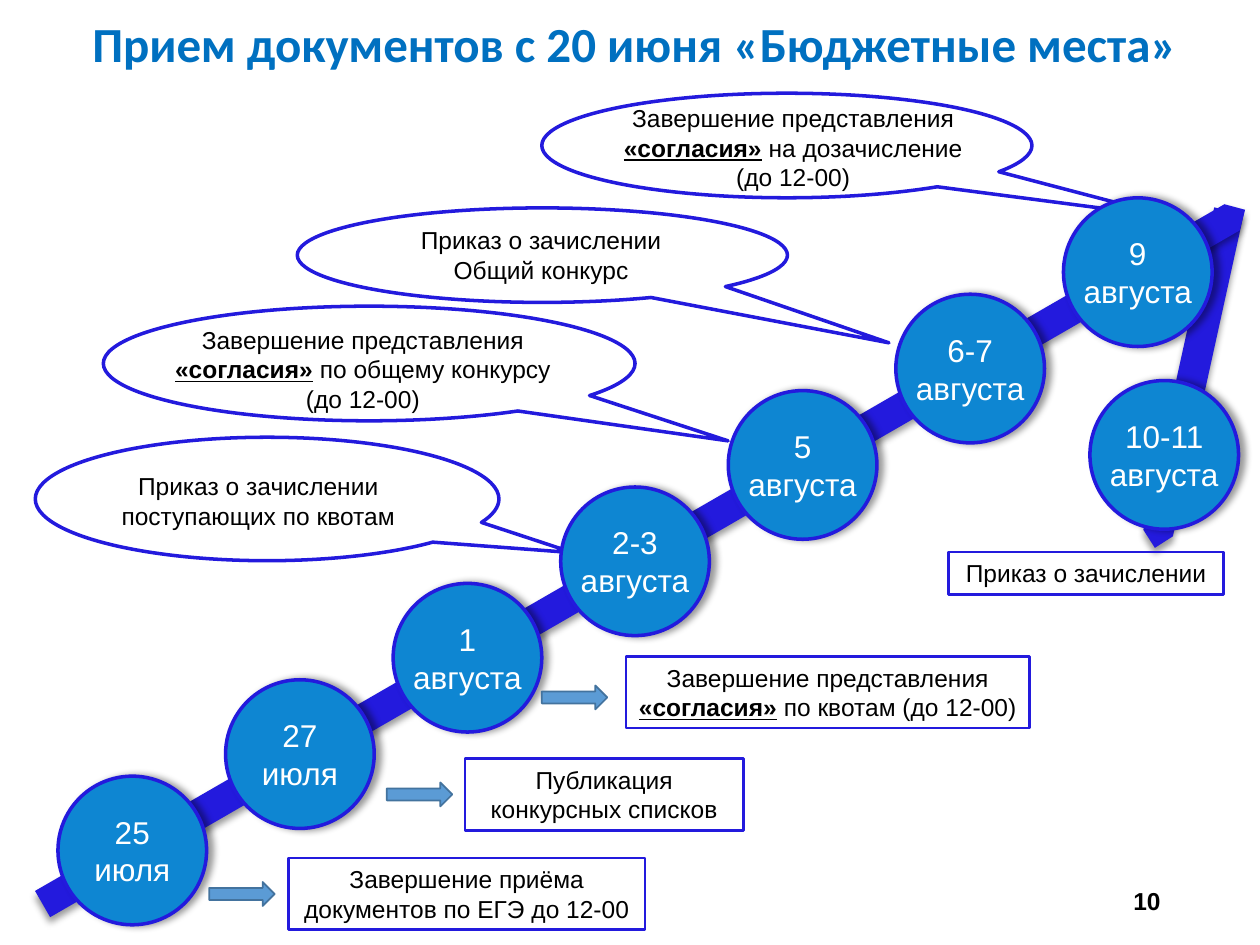
from lxml import etree
from pptx import Presentation
from pptx.dml.color import RGBColor
from pptx.enum.shapes import MSO_SHAPE
from pptx.enum.text import MSO_ANCHOR, PP_ALIGN
from pptx.oxml.ns import qn
from pptx.util import Inches, Pt

CALLOUT = MSO_SHAPE.OVAL_CALLOUT
RECT, OVAL = MSO_SHAPE.RECTANGLE, MSO_SHAPE.OVAL
PENTAGON, ARROW = MSO_SHAPE.PENTAGON, MSO_SHAPE.RIGHT_ARROW
TOP, MIDDLE = MSO_ANCHOR.TOP, MSO_ANCHOR.MIDDLE
CENTER, RIGHT = PP_ALIGN.CENTER, PP_ALIGN.RIGHT

INDIGO = RGBColor(0x23, 0x1A, 0xDD)
BLUE = RGBColor(0x0E, 0x86, 0xD2)
TITLE_BLUE = RGBColor(0x00, 0x70, 0xC0)
ARROW_FILL = RGBColor(0x5B, 0x9B, 0xD5)
ARROW_LINE = RGBColor(0x43, 0x73, 0x9E)
BLACK = RGBColor(0, 0, 0)
WHITE = RGBColor(255, 255, 255)

DIAMETER = 1.18
STEP_X, STEP_Y = 1.33, -0.765
DATES = ["25\nиюля", "27\nиюля", "1\nавгуста", "2-3\nавгуста",
         "5\nавгуста", "6-7\nавгуста", "9\nавгуста"]

# callout box, pointer offset, text box, text (emphasis between asterisks)
CALLOUTS = [
    ((4.3, 0.74, 3.89, 0.83), (0.787, 0.688), (4.42, 0.77, 3.75, 0.81),
     "Завершение представления *«согласия»* на дозачисление\n(до 12-00)"),
    ((2.36, 1.65, 3.89, 0.75), (0.707, 0.928), (2.88, 1.74, 2.83, 0.57),
     "Приказ о зачислении\nОбщий конкурс"),
    ((0.82, 2.43, 4.22, 0.91), (0.675, 0.675), (1.02, 2.53, 3.72, 0.81),
     "Завершение представления *«согласия»* по общему конкурсу\n(до 12-00)"),
    ((0.28, 3.47, 3.68, 0.98), (0.66, 0.435), (0.43, 3.69, 3.24, 0.57),
     "Приказ о зачислении поступающих по квотам"),
]
NOTES = [
    ((2.29, 6.81, 2.83, 0.57), "Завершение приёма документов по ЕГЭ до 12-00"),
    ((3.69, 6.02, 2.21, 0.57), "Публикация конкурсных списков"),
    ((4.97, 5.21, 3.2, 0.57),
     "Завершение представления *«согласия»* по квотам (до 12-00)"),
    ((7.53, 4.38, 2.18, 0.34), "Приказ о зачислении"),
]
ARROWS = [(1.66, 7), (3.07, 6.21), (4.3, 5.44)]


def write(s, text, size=14, color=BLACK, font="Arial", bold=False,
          align=CENTER, anchor=TOP, wrap=True):
    """Fill a shape with text; parts between asterisks are bold and underlined."""
    tf = s.text_frame
    tf.word_wrap = wrap
    tf.vertical_anchor = anchor
    for i, line in enumerate(text.split("\n")):
        p = tf.add_paragraph() if i else tf.paragraphs[0]
        p.alignment = align
        for j, part in enumerate(line.split("*")):
            r = p.add_run()
            r.text = part
            emphasis = j % 2 == 1
            r.font.name, r.font.size = font, Pt(size)
            r.font.bold, r.font.underline = bold or emphasis, emphasis
            r.font.color.rgb = color


def add_text(slide, box, text, **style):
    write(slide.shapes.add_textbox(*map(Inches, box)), text, **style)


def add_figure(slide, kind, box, fill=None, line=None, width=2):
    s = slide.shapes.add_shape(kind, *map(Inches, box))
    s.shadow.inherit = False
    if fill is None:
        s.fill.background()
    else:
        s.fill.solid()
        s.fill.fore_color.rgb = fill
    if line is None:
        s.line.fill.background()
    else:
        s.line.color.rgb = line
        s.line.width = Pt(width)
    return s


def add_shadow(s, degrees):
    effects = s._element.spPr.find(qn("a:effectLst"))
    shadow = etree.SubElement(effects, qn("a:outerShdw"), blurRad=str(Pt(4)),
                              dist=str(Pt(3)), dir=str(degrees * 60000),
                              algn="ctr", rotWithShape="0")
    color = etree.SubElement(shadow, qn("a:srgbClr"), val=str(BLACK))
    etree.SubElement(color, qn("a:alpha"), val="40000")


def add_band(slide, box, rotation):
    s = add_figure(slide, PENTAGON, box, fill=INDIGO)
    s.rotation = rotation
    add_shadow(s, 90)


def add_date(slide, left, top, text):
    s = add_figure(slide, OVAL, (left, top, DIAMETER, DIAMETER), BLUE, INDIGO)
    add_shadow(s, 0)
    write(s, text, size=18, color=WHITE, anchor=MIDDLE, wrap=False)


def add_callout(slide, box, pointer, text_box, text):
    s = add_figure(slide, CALLOUT, box, line=INDIGO)
    s.adjustments[0], s.adjustments[1] = pointer
    add_text(slide, text_box, text)


def add_timeline(slide, left, top):
    """Rising band with one date circle per step, starting at the lower left."""
    add_band(slide, (-0.4, 4.3, 11.02, 0.24), 330)
    for i, date in enumerate(DATES):
        add_date(slide, left + i * STEP_X, top + i * STEP_Y, date)


def main():
    prs = Presentation()
    prs.slide_width, prs.slide_height = Inches(10), Inches(7.5)
    slide = prs.slides.add_slide(prs.slide_layouts[6])

    add_band(slide, (8.09, 2.89, 2.74, 0.24), 102.4)
    add_text(slide, (0.58, 0.06, 8.91, 0.57),
             "Прием документов с 20 июня «Бюджетные места»",
             size=28, color=TITLE_BLUE, font="Calibri", bold=True, wrap=False)
    for callout in CALLOUTS:
        add_callout(slide, *callout)
    add_timeline(slide, 0.46, 6.16)
    add_date(slide, 8.65, 3.02, "10-11\nавгуста")
    for box, text in NOTES:
        write(add_figure(slide, RECT, box, line=INDIGO, width=1.5), text)
    for left, top in ARROWS:
        add_figure(slide, ARROW, (left, top, 0.52, 0.19),
                   ARROW_FILL, ARROW_LINE, 1)
    add_text(slide, (7.06, 6.95, 2.25, 0.4), "10",
             bold=True, align=RIGHT, anchor=MIDDLE)
    prs.save("out.pptx")


if __name__ == "__main__":
    main()
